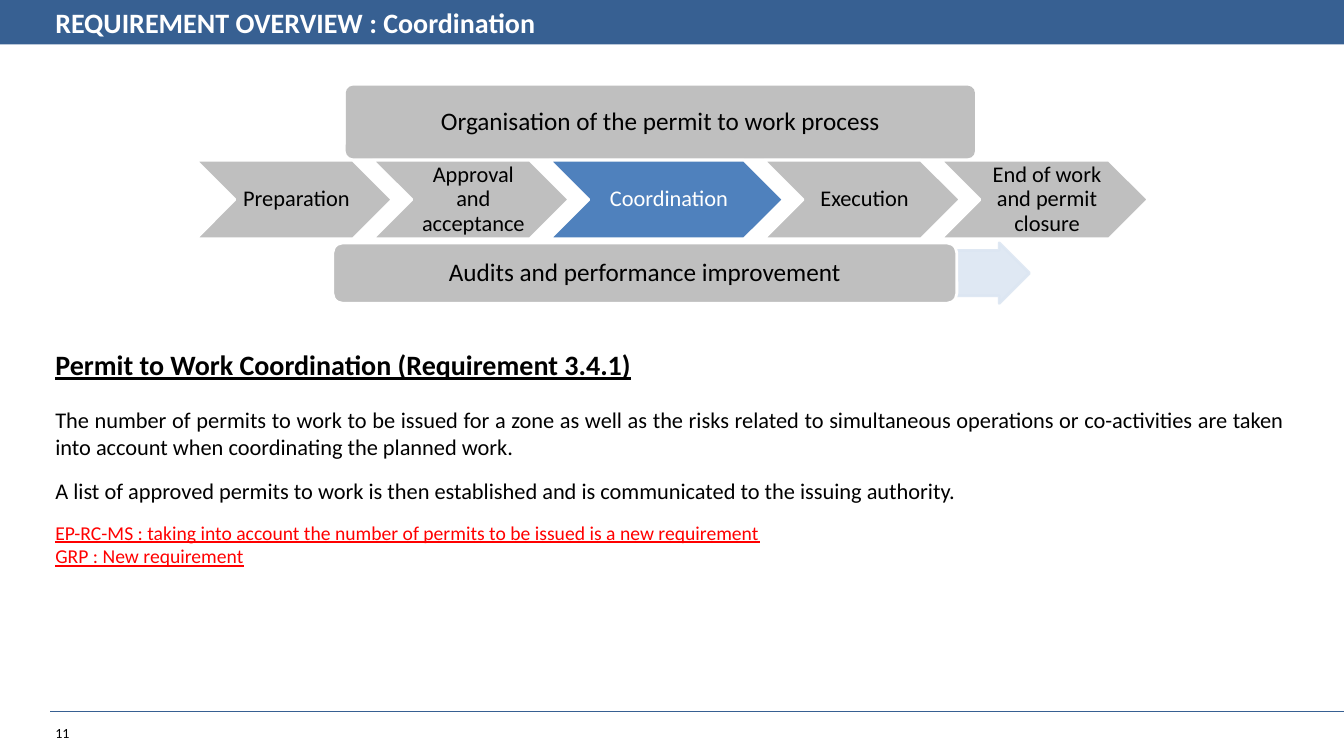
from copy import deepcopy

from lxml.etree import SubElement
from pptx import Presentation
from pptx.dml.color import RGBColor
from pptx.enum.shapes import MSO_CONNECTOR, MSO_SHAPE
from pptx.enum.text import MSO_ANCHOR, PP_ALIGN
from pptx.oxml.ns import qn
from pptx.util import Inches, Pt

NAVY = RGBColor(0x37, 0x60, 0x92)
BLUE = RGBColor(0x4F, 0x81, 0xBD)
PALE_BLUE = RGBColor(0xDC, 0xE6, 0xF2)
GREY = RGBColor(0xBF, 0xBF, 0xBF)
WHITE = RGBColor(0xFF, 0xFF, 0xFF)
BLACK = RGBColor(0, 0, 0)
RED = RGBColor(0xFF, 0, 0)

deck = Presentation()
deck.slide_width, deck.slide_height = Inches(13.33), Inches(7.5)
page = deck.slides.add_slide(deck.slide_layouts[6])


def write(para, text, size=16, color=BLACK, bold=False, underline=False,
          align=PP_ALIGN.LEFT, before=0, after=0, spacing=1.0):
    para.text = text
    para.alignment = align
    para.space_before, para.space_after = Pt(before), Pt(after)
    para.line_spacing = spacing
    for span in para.runs:
        span.font.name, span.font.size = "Calibri", Pt(size)
        span.font.color.rgb = color
        span.font.bold, span.font.underline = bold, underline
    # Line breaks take the format of the text around them
    for line_break in para._p.findall(qn("a:br")):
        line_break.append(deepcopy(para.runs[0].font._element))


def add_block(kind, left, top, width, height, fill, line=None, margins=(0, 0, 0, 0)):
    block = page.shapes.add_shape(kind, Inches(left), Inches(top),
                                  Inches(width), Inches(height))
    block.shadow.inherit = False
    block.fill.solid()
    block.fill.fore_color.rgb = fill
    if line is None:
        block.line.fill.background()
    else:
        block.line.color.rgb = line
        block.line.width = Pt(2)
    frame = block.text_frame
    frame.word_wrap = True
    frame.vertical_anchor = MSO_ANCHOR.MIDDLE
    (frame.margin_left, frame.margin_top,
     frame.margin_right, frame.margin_bottom) = [Inches(m) for m in margins]
    return block


# Footer rule and page number
rule = page.shapes.add_connector(MSO_CONNECTOR.STRAIGHT, Inches(0.5), Inches(7.06),
                                 Inches(13.33), Inches(7.06))
rule.line.color.rgb = NAVY
rule.line.width = Pt(0.75)
SubElement(rule._element.spPr, qn("a:effectLst"))

number_box = page.shapes.add_textbox(Inches(0.45), Inches(7.14), Inches(0.71), Inches(0.27))
number_box.text_frame.word_wrap = True
write(number_box.text_frame.paragraphs[0], "11", size=10)

# Title band
add_block(MSO_SHAPE.RECTANGLE, 0, 0, 13.33, 0.44, NAVY)
title_box = page.shapes.add_textbox(Inches(0.45), 0, Inches(10.47), Inches(0.44))
title_box.text_frame.word_wrap = True
title_box.text_frame.vertical_anchor = MSO_ANCHOR.MIDDLE
write(title_box.text_frame.paragraphs[0], "REQUIREMENT OVERVIEW : Coordination",
      size=20, color=WHITE, bold=True)

# Requirement text
body_box = page.shapes.add_textbox(Inches(0.45), Inches(3.4), Inches(12.39), Inches(3.78))
body = body_box.text_frame
body.word_wrap = True
write(body.paragraphs[0], "Permit to Work Coordination (Requirement 3.4.1)",
      size=20, bold=True, underline=True, after=12)
for text in (
    "The number of permits to work to be issued for a zone as well as the risks related to "
    "simultaneous operations or co-activities are taken into account when coordinating "
    "the planned work.",
    "A list of approved permits to work is then established and is communicated to the "
    "issuing authority.",
):
    write(body.add_paragraph(), text, align=PP_ALIGN.JUSTIFY, before=6, after=6)
write(body.add_paragraph(),
      "EP-RC-MS : taking into account the number of permits to be issued is a new requirement"
      "\vGRP : New requirement",
      size=14, color=RED, underline=True, before=6, after=6)

# Organisation bar above the process
organisation = add_block(MSO_SHAPE.ROUNDED_RECTANGLE, 3.43, 0.85, 6.24, 0.72, GREY,
                         margins=(0.01, 0.01, 0.01, 0.01))
organisation.adjustments[0] = 0.1
write(organisation.text_frame.paragraphs[0], "Organisation of the permit to work process",
      size=18, align=PP_ALIGN.CENTER, spacing=0.9)

# Process chevrons, each overlapping the next by a quarter of the height
STEP_HEIGHT = 0.78
steps = [
    ("Preparation", 1.95, GREY, BLACK),
    ("Approval and acceptance", 1.95, GREY, BLACK),
    ("Coordination", 2.32, BLUE, WHITE),
    ("Execution", 1.95, GREY, BLACK),
    ("End of work and permit closure", 2.06, GREY, BLACK),
]
left = 1.94
for label, width, fill, color in steps:
    chevron = add_block(MSO_SHAPE.CHEVRON, left, 1.59, width, STEP_HEIGHT, fill,
                        line=WHITE, margins=(0.07, 0.02, 0.02, 0.02))
    write(chevron.text_frame.paragraphs[0], label, color=color,
          align=PP_ALIGN.CENTER, spacing=0.9)
    left += width - STEP_HEIGHT / 4

# Audit bar and its arrow below the process
arrow = add_block(MSO_SHAPE.RIGHT_ARROW, 9.33, 2.41, 0.88, 0.6, PALE_BLUE, line=PALE_BLUE)
arrow.adjustments[0], arrow.adjustments[1] = 0.75, 0.5
for color_element in arrow._element.spPr.iter(qn("a:srgbClr")):
    SubElement(color_element, qn("a:alpha"), val="90000")

audits = add_block(MSO_SHAPE.ROUNDED_RECTANGLE, 3.3, 2.41, 6.19, 0.6, GREY,
                   line=WHITE, margins=(0.07, 0.04, 0.07, 0.04))
write(audits.text_frame.paragraphs[0], "Audits and performance improvement",
      size=18, align=PP_ALIGN.CENTER, spacing=0.9)

deck.save("out.pptx")
